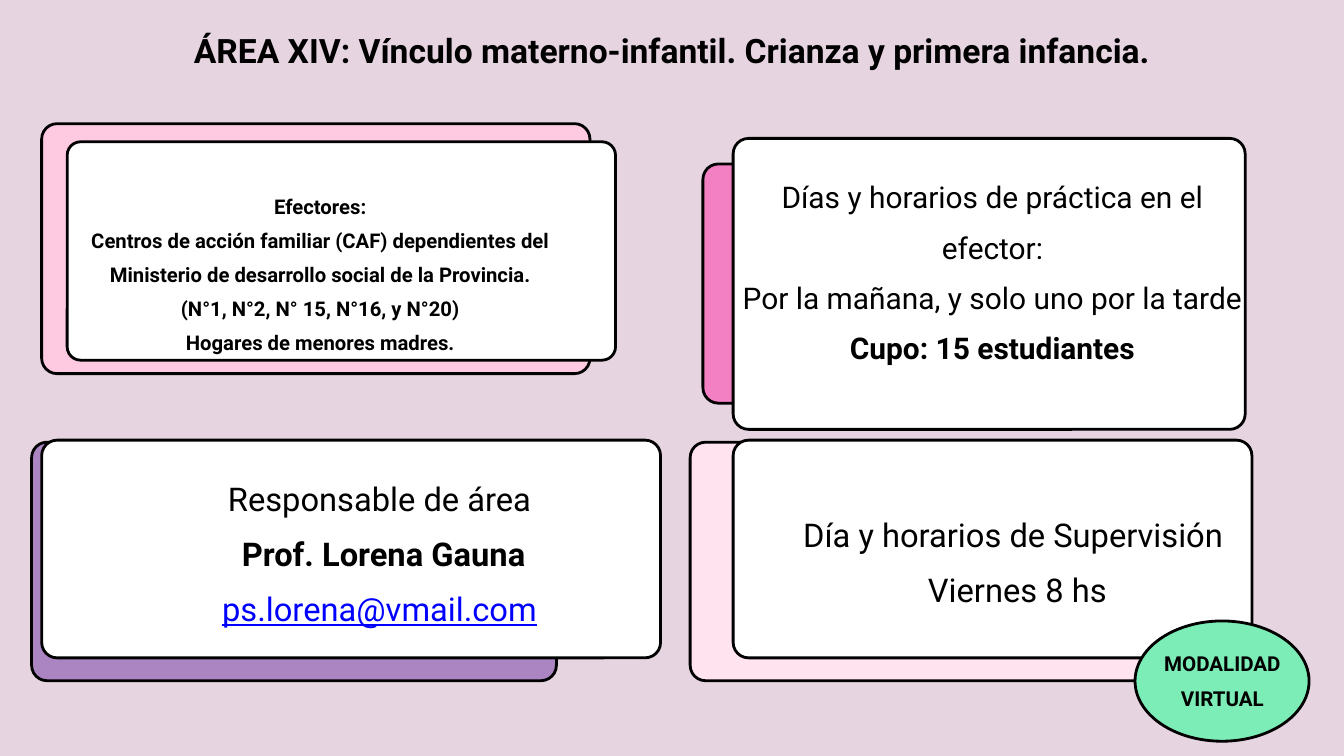
from dataclasses import dataclass

import pptx
import pptx.dml.color
import pptx.enum.shapes
import pptx.enum.text
import pptx.util

Inches = pptx.util.Inches
Shapes = pptx.enum.shapes.MSO_SHAPE
Anchor = pptx.enum.text.MSO_ANCHOR


@dataclass(frozen=True)
class Theme:
    background: str = "E6D4E1"
    ink: str = "000000"
    paper: str = "FFFFFF"
    rose: str = "FDCAE1"
    pink: str = "F380C2"
    purple: str = "AB84C2"
    blush: str = "FFE4F0"
    mint: str = "7CEDB6"
    email: str = "0000FF"
    font: str = "Roboto"
    title_size: float = 36
    contact_size: float = 35
    schedule_size: float = 32
    badge_size: float = 22
    places_size: float = 21.7
    outline: float = 3
    line_spacing: float = 1.4


THEME = Theme()


@dataclass(frozen=True)
class Box:
    left: float
    top: float
    width: float
    height: float

    def emu(self) -> tuple:
        return tuple(map(Inches, (self.left, self.top, self.width, self.height)))


@dataclass(frozen=True)
class Panel:
    box: Box
    fill: str
    radius: float = 0.23


@dataclass(frozen=True)
class Line:
    text: str
    bold: bool = False
    color: str = THEME.ink
    underline: bool = False


@dataclass(frozen=True)
class Caption:
    box: Box
    size: float
    lines: tuple[Line, ...]
    inset: float = 0
    anchor: Anchor = Anchor.TOP


TITLE = Caption(Box(0.43, 0.2, 19.14, 0.7), THEME.title_size, (
    Line("ÁREA XIV: Vínculo materno-infantil. Crianza y primera infancia.", bold=True),
))

PANELS = (
    Panel(Box(0.62, 1.84, 8.16, 3.72), THEME.rose),
    Panel(Box(1, 2.11, 8.16, 3.25), THEME.paper, 0.2),
    Panel(Box(10.46, 2.44, 7.81, 3.56), THEME.pink),
    Panel(Box(10.91, 2.06, 7.62, 4.33), THEME.paper),
    Panel(Box(0.47, 6.58, 7.81, 3.55), THEME.purple),
    Panel(Box(0.62, 6.55, 9.21, 3.24), THEME.paper),
    Panel(Box(10.27, 6.58, 7.81, 3.55), THEME.blush),
    Panel(Box(10.91, 6.55, 7.72, 3.24), THEME.paper),
)

BADGE = Panel(Box(16.89, 9.24, 2.59, 1.79), THEME.mint)

CAPTIONS = (
    Caption(Box(10.96, 2, 7.62, 3.89), THEME.schedule_size, (
        Line("Días y horarios de práctica en el efector:"),
        Line("Por la mañana, y solo uno por la tarde"),
        Line("Cupo: 15 estudiantes", bold=True),
    ), 0.06, Anchor.MIDDLE),
    Caption(Box(17.14, 9.26, 2.1, 1.6), THEME.badge_size, (
        Line("MODALIDAD VIRTUAL", bold=True),
    ), 0.06, Anchor.MIDDLE),
    Caption(Box(2.76, 6.9, 5.78, 2.24), THEME.contact_size, (
        Line("Responsable de área"),
        Line(" Prof. Lorena Gauna", bold=True),
        Line("ps.lorena@vmail.com", color=THEME.email, underline=True),
    )),
    Caption(Box(11.89, 7.43, 6.38, 1.36), THEME.contact_size, (
        Line("Día y horarios de Supervisión"),
        Line(" Viernes 8 hs"),
    )),
    Caption(Box(1, 2.75, 7.53, 2.42), THEME.places_size, (
        Line("Efectores:", bold=True),
        Line("Centros de acción familiar (CAF) dependientes del "
             "Ministerio de desarrollo social de la Provincia.", bold=True),
        Line("(N°1, N°2, N° 15, N°16, y N°20)", bold=True),
        Line("Hogares de menores madres.", bold=True),
    )),
)


def rgb(value: str) -> pptx.dml.color.RGBColor:
    return pptx.dml.color.RGBColor.from_string(value)


def draw_panel(slide, panel: Panel, kind: Shapes = Shapes.ROUNDED_RECTANGLE) -> None:
    card = slide.shapes.add_shape(kind, *panel.box.emu())
    if kind == Shapes.ROUNDED_RECTANGLE:
        card.adjustments[0] = panel.radius / min(panel.box.width, panel.box.height)
    card.shadow.inherit = False
    card.fill.solid()
    card.fill.fore_color.rgb = rgb(panel.fill)
    card.line.color.rgb = rgb(THEME.ink)
    card.line.width = pptx.util.Pt(THEME.outline)


def write_caption(holder, caption: Caption) -> None:
    holder.left, holder.top, holder.width, holder.height = caption.box.emu()
    frame = holder.text_frame
    frame.text = "\n".join(line.text for line in caption.lines)
    frame.word_wrap = True
    frame.auto_size = pptx.enum.text.MSO_AUTO_SIZE.NONE
    frame.vertical_anchor = caption.anchor
    frame.margin_left = frame.margin_right = Inches(caption.inset)
    frame.margin_top = frame.margin_bottom = Inches(caption.inset)
    for paragraph, line in zip(frame.paragraphs, caption.lines):
        paragraph.alignment = pptx.enum.text.PP_ALIGN.CENTER
        paragraph.line_spacing = THEME.line_spacing
        paragraph.space_before = pptx.util.Pt(0)
        for run in paragraph.runs:
            run.font.name = THEME.font
            run.font.size = pptx.util.Pt(caption.size)
            run.font.bold = line.bold
            run.font.underline = line.underline
            run.font.color.rgb = rgb(line.color)


def main() -> None:
    deck = pptx.Presentation()
    deck.slide_width, deck.slide_height = Inches(20), Inches(11.25)
    slide = deck.slides.add_slide(deck.slide_layouts.get_by_name("Title Only"))
    slide.background.fill.solid()
    slide.background.fill.fore_color.rgb = rgb(THEME.background)

    write_caption(slide.shapes.title, TITLE)
    for panel in PANELS:
        draw_panel(slide, panel)
    draw_panel(slide, BADGE, Shapes.OVAL)
    for caption in CAPTIONS:
        write_caption(slide.shapes.add_textbox(*caption.box.emu()), caption)

    deck.save("out.pptx")


if __name__ == "__main__":
    main()
